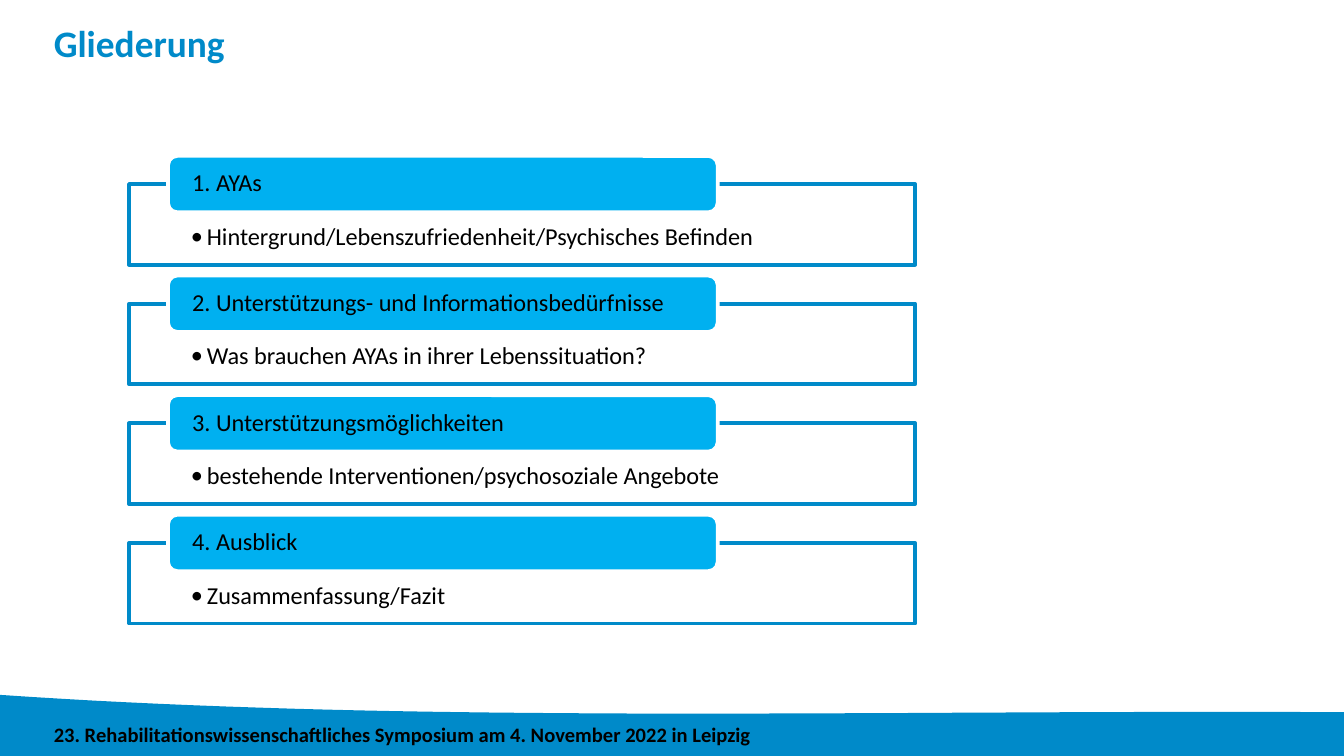
from dataclasses import dataclass

from lxml import etree
from pptx import Presentation
from pptx.dml.color import RGBColor
from pptx.enum import shapes, text
from pptx.oxml import ns
from pptx.util import Inches, Pt


@dataclass(frozen=True)
class Theme:
    font: str = "Calibri"
    blue: RGBColor = RGBColor(0x00, 0x8A, 0xC9)
    light_blue: RGBColor = RGBColor(0x00, 0xB0, 0xF0)
    white: RGBColor = RGBColor(0xFF, 0xFF, 0xFF)
    black: RGBColor = RGBColor(0x00, 0x00, 0x00)
    title_size: Pt = Pt(20)
    body_size: Pt = Pt(13)
    footer_size: Pt = Pt(11)


theme = Theme()


def write(shape, content, size, color, bold=False, insets=(0, 0, 0, 0), anchor=text.MSO_ANCHOR.TOP):
    frame = shape.text_frame
    frame.word_wrap = True
    frame.auto_size = text.MSO_AUTO_SIZE.NONE
    frame.vertical_anchor = anchor
    frame.margin_left, frame.margin_top, frame.margin_right, frame.margin_bottom = map(Inches, insets)
    paragraph = frame.paragraphs[0]
    paragraph.text = content
    paragraph.alignment = text.PP_ALIGN.LEFT
    paragraph.font.name = theme.font
    paragraph.font.size = size
    paragraph.font.bold = bold
    paragraph.font.color.rgb = color
    return paragraph


def add_panel(kind, left, top, width, height, fill, line):
    shape = slide.shapes.add_shape(kind, Inches(left), Inches(top), Inches(width), Inches(height))
    shape.shadow.inherit = False
    shape.fill.solid()
    shape.fill.fore_color.rgb = fill
    shape.line.color.rgb = line
    shape.line.width = Pt(2)
    return shape


presentation = Presentation()
presentation.slide_width = Inches(10)
presentation.slide_height = Inches(10 * 9 / 16)
slide = presentation.slides.add_slide(presentation.slide_layouts[5])

curve = ((-0.01, 5.17), (3.17, 5.39), (6.66, 5.28), (10, 5.3))
steps = 40
wave_points = []
for step in range(steps + 1):
    t = step / steps
    weights = ((1 - t) ** 3, 3 * t * (1 - t) ** 2, 3 * t ** 2 * (1 - t), t ** 3)
    wave_points.append(tuple(
        Inches(sum(weight * point[axis] for weight, point in zip(weights, curve))) for axis in (0, 1)
    ))
builder = slide.shapes.build_freeform(*wave_points[0])
builder.add_line_segments(
    wave_points[1:] + [(Inches(10), Inches(5.63)), (Inches(-0.01), Inches(5.63))], close=True
)
wave = builder.convert_to_shape()
wave.shadow.inherit = False
wave.fill.solid()
wave.fill.fore_color.rgb = theme.blue
wave.line.fill.background()

footer = slide.shapes.add_textbox(Inches(0.4), Inches(5.37), Inches(7.28), Inches(0.25))
write(footer, "23. Rehabilitationswissenschaftliches Symposium am 4. November 2022 in Leipzig",
      theme.footer_size, theme.black, bold=True)

title = slide.shapes.title
title.left, title.top, title.width, title.height = Inches(0.4), Inches(0.15), Inches(4.97), Inches(0.66)
write(title, "Gliederung", theme.title_size, theme.blue, bold=True).line_spacing = Pt(24)

sections = (
    ("1. AYAs", "Hintergrund/Lebenszufriedenheit/Psychisches Befinden"),
    ("2. Unterstützungs- und Informationsbedürfnisse", "Was brauchen AYAs in ihrer Lebenssituation?"),
    ("3. Unterstützungsmöglichkeiten", "bestehende Interventionen/psychosoziale Angebote"),
    ("4. Ausblick", "Zusammenfassung/Fazit"),
)
for index, (heading, detail) in enumerate(sections):
    top = 1.16 + index * 0.89

    box = add_panel(shapes.MSO_SHAPE.RECTANGLE, 0.96, top + 0.21, 5.85, 0.6, theme.white, theme.blue)
    color = box.fill._xPr.find(ns.qn("a:solidFill"))[0]
    etree.SubElement(color, ns.qn("a:alpha"), val="90000")
    properties = box.text_frame.paragraphs[0]._p.get_or_add_pPr()
    properties.set("marL", str(Inches(0.12)))
    properties.set("indent", str(Inches(-0.12)))
    etree.SubElement(properties, ns.qn("a:buFont"), typeface=theme.font)
    etree.SubElement(properties, ns.qn("a:buChar"), char="•")
    paragraph = write(box, detail, theme.body_size, theme.black, insets=(0.46, 0.3, 0.45, 0.1))
    paragraph.line_spacing = 0.9

    label = add_panel(shapes.MSO_SHAPE.ROUNDED_RECTANGLE, 1.25, top, 4.09, 0.42, theme.light_blue, theme.white)
    paragraph = write(label, heading, theme.body_size, theme.black,
                      insets=(0.16, 0, 0.15, 0), anchor=text.MSO_ANCHOR.MIDDLE)
    paragraph.line_spacing = 0.9

presentation.save("out.pptx")
